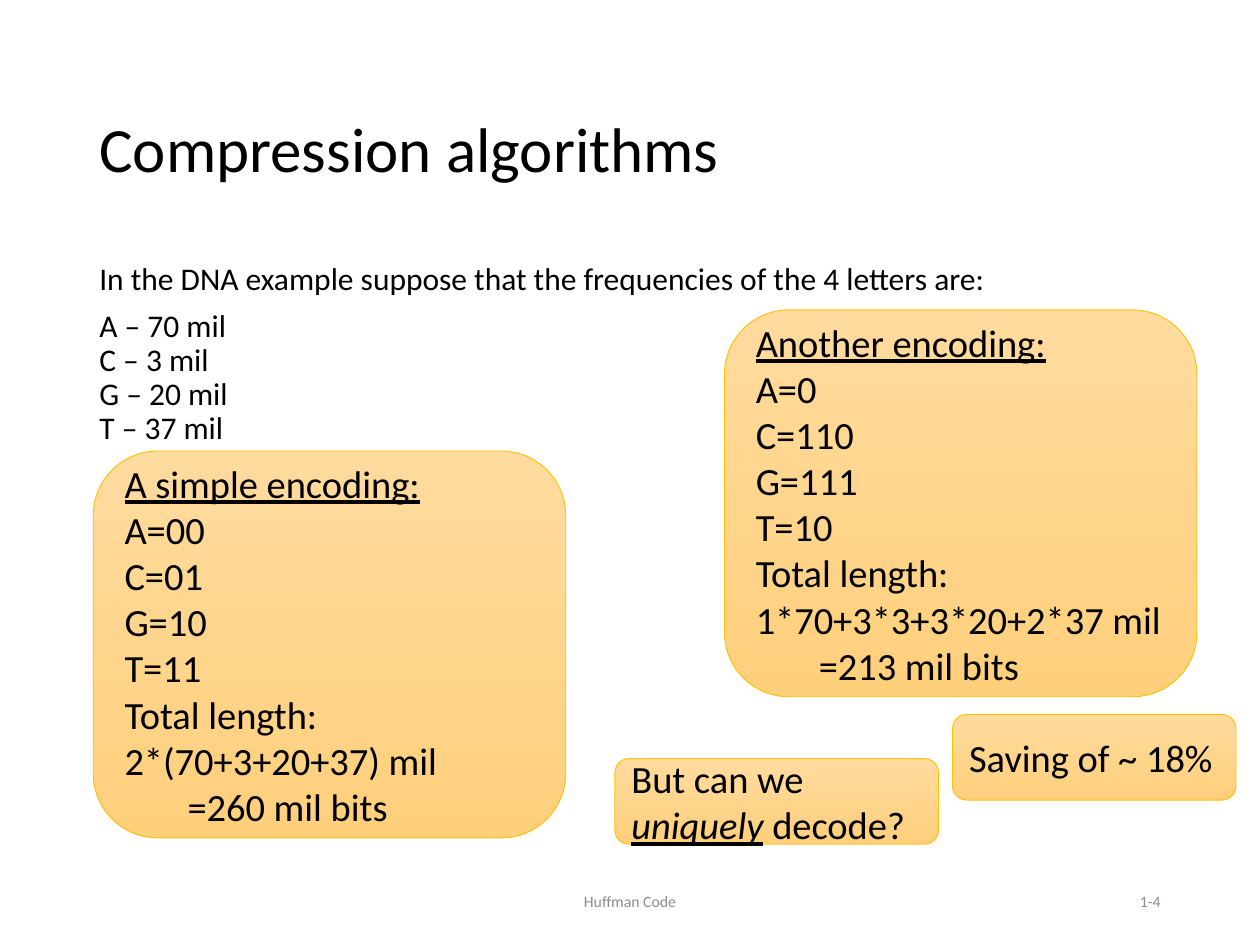
from typing import NamedTuple

from pptx import Presentation
from pptx.dml.color import RGBColor
from pptx.enum.shapes import MSO_SHAPE
from pptx.enum.text import MSO_ANCHOR, PP_ALIGN
from pptx.util import Inches, Pt

ROUND = MSO_SHAPE.ROUNDED_RECTANGLE
TOP, MIDDLE = MSO_ANCHOR.TOP, MSO_ANCHOR.MIDDLE
LEFT, CENTER, RIGHT = PP_ALIGN.LEFT, PP_ALIGN.CENTER, PP_ALIGN.RIGHT

FONT = "Calibri"
COLORS = {
    "text": "000000",
    "footer": "8C8C8C",
    "light": "FFDB9E",
    "dark": "FFD07C",
    "edge": "FFC000",
}


class Part(NamedTuple):
    """A stretch of text, stressed by underline and italic."""
    text: str
    under: bool = False
    italic: bool = False


class Area(NamedTuple):
    left: float
    top: float
    width: float
    height: float


class Card(NamedTuple):
    area: Area
    paras: list[list[Part]]


def color(name: str) -> RGBColor:
    return RGBColor.from_string(COLORS[name])


def write(frame, paras: list[list[Part]], *, size: float, tint: str = "text",
          align=LEFT, anchor=MIDDLE, line: float = 1.0, before: float = 0) -> None:
    """Fill a text frame; a newline inside a part becomes a line break."""
    frame.word_wrap = True
    frame.vertical_anchor = anchor
    for num, parts in enumerate(paras):
        para = frame.paragraphs[0] if num == 0 else frame.add_paragraph()
        para.alignment = align
        para.line_spacing = line
        para.space_before = Pt(before)
        para.font.size = Pt(size)
        for part in parts:
            for row, text in enumerate(part.text.split("\n")):
                if row:
                    para.add_line_break()
                if not text:
                    continue
                run = para.add_run()
                run.text = text
                font = run.font
                font.name, font.size = FONT, Pt(size)
                font.color.rgb = color(tint)
                font.underline, font.italic = part.under, part.italic


def add_text(slide, area: Area, *lines: str, **style) -> None:
    box = slide.shapes.add_textbox(*map(Inches, area))
    write(box.text_frame, [[Part(line)] for line in lines], **style)


def add_card(slide, card: Card) -> None:
    shape = slide.shapes.add_shape(ROUND, *map(Inches, card.area))
    shape.shadow.inherit = False
    shape.fill.gradient()
    shape.fill.gradient_angle = 270
    for stop, name in zip(shape.fill.gradient_stops, ("light", "dark")):
        stop.color.rgb = color(name)
    shape.line.color.rgb = color("edge")
    shape.line.width = Pt(0.5)
    write(shape.text_frame, card.paras, size=22)


def encoding(title: str, codes: dict[str, str], total: str,
             result: int) -> list[list[Part]]:
    return [
        [Part(title, under=True)],
        *([Part(f"{letter}={code}")] for letter, code in codes.items()),
        [Part(f"Total length:\n{total} mil")],
        [Part(f"\t={result} mil bits")],
    ]


CARDS = [
    Card(Area(0.74, 3.58, 3.75, 3.07),
         encoding("A simple encoding:",
                  {"A": "00", "C": "01", "G": "10", "T": "11"},
                  "2*(70+3+20+37)", 260)),
    Card(Area(5.75, 2.46, 3.75, 3.07),
         encoding("Another encoding:",
                  {"A": "0", "C": "110", "G": "111", "T": "10"},
                  "1*70+3*3+3*20+2*37", 213)),
    Card(Area(7.56, 5.67, 2.25, 0.68), [[Part("Saving of ~ 18%")]]),
    Card(Area(4.88, 6.02, 2.57, 0.68),
         [[Part("But can we\n"), Part("uniquely", under=True, italic=True),
           Part(" decode?")]]),
]


def main() -> None:
    deck = Presentation()
    deck.slide_width, deck.slide_height = Inches(10), Inches(7.5)
    slide = deck.slides.add_slide(deck.slide_layouts[6])

    add_text(slide, Area(0.69, 0.4, 8.62, 1.45), "Compression algorithms",
             size=36, line=1.15, before=6)
    add_text(slide, Area(3.31, 6.95, 3.38, 0.4), "Huffman Code",
             size=9, tint="footer", align=CENTER)
    add_text(slide, Area(7.06, 6.95, 2.25, 0.4), "1-4",
             size=9, tint="footer", align=RIGHT)
    add_text(slide, Area(0.69, 2.04, 8.62, 4.76),
             "In the DNA example suppose that the frequencies of the 4 letters are:",
             "A – 70 mil\nC – 3 mil\nG – 20 mil\nT – 37 mil",
             size=18, anchor=TOP, line=0.9, before=7.5)
    for card in CARDS:
        add_card(slide, card)

    deck.save("out.pptx")


if __name__ == "__main__":
    main()
